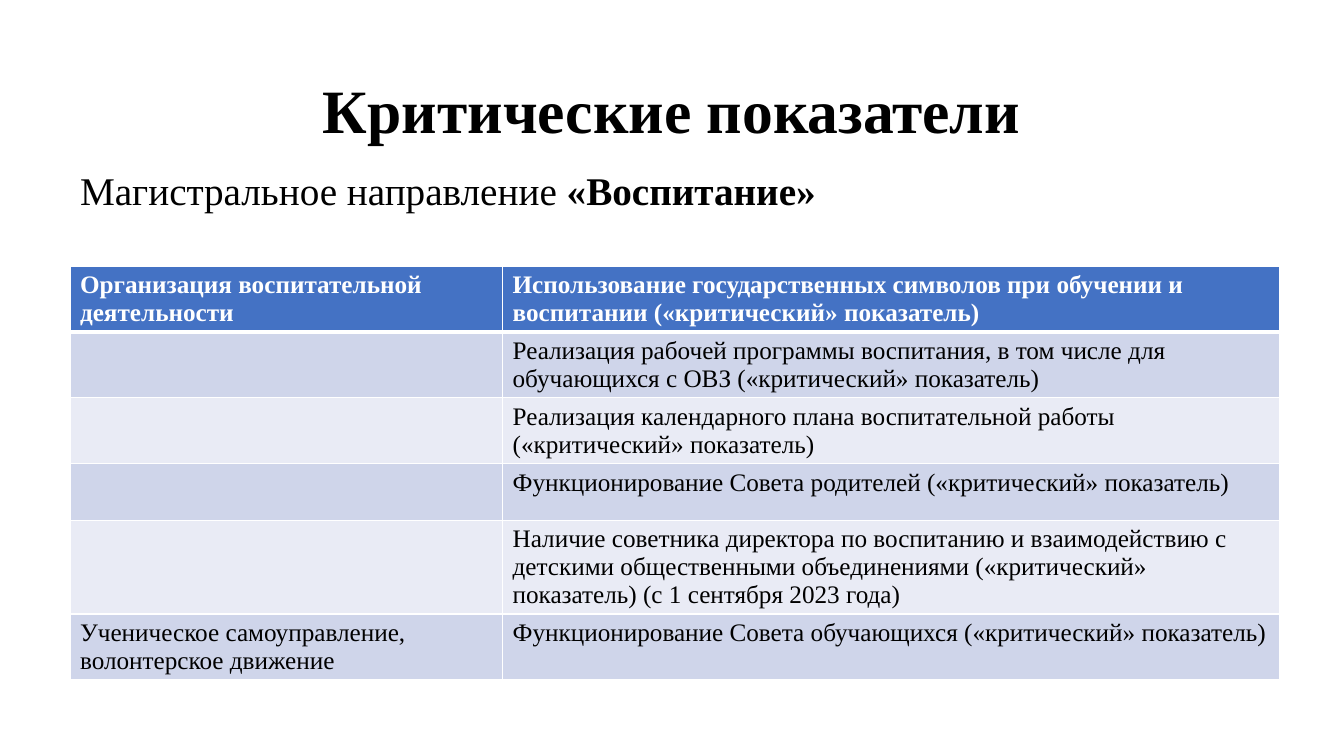
from lxml.etree import SubElement
from pptx import Presentation
from pptx.dml.color import RGBColor
from pptx.enum.text import MSO_ANCHOR, MSO_AUTO_SIZE, PP_ALIGN
from pptx.oxml.ns import qn
from pptx.util import Pt

BLACK = RGBColor(0x00, 0x00, 0x00)
WHITE = RGBColor(0xFF, 0xFF, 0xFF)
HEADER_BLUE = RGBColor(0x44, 0x72, 0xC4)
BAND_DARK = RGBColor(0xCF, 0xD5, 0xEA)
BAND_LIGHT = RGBColor(0xE9, 0xEB, 0xF5)
FONT = "Times New Roman"

COLUMN_WIDTHS = (309, 555)
ROW_HEIGHT = 40.32
INDICATORS = [
    ("Организация воспитательной деятельности",
     "Использование государственных символов при обучении и воспитании («критический» показатель)"),
    ("", "Реализация рабочей программы воспитания, в том числе для обучающихся с ОВЗ («критический» показатель)"),
    ("", "Реализация календарного плана воспитательной работы («критический» показатель)"),
    ("", "Функционирование Совета родителей («критический» показатель)"),
    ("", "Наличие советника директора по воспитанию и взаимодействию с детскими общественными "
         "объединениями («критический» показатель) (с 1 сентября 2023 года)"),
    ("Ученическое самоуправление, волонтерское движение",
     "Функционирование Совета обучающихся («критический» показатель)"),
]


def add_text(p, text, size=18, bold=False, color=BLACK):
    r = p.add_run()
    r.text = text
    r.font.name = FONT
    r.font.size = Pt(size)
    r.font.bold = bold
    r.font.color.rgb = color


def place(sp, left, top, width, height):
    sp.left, sp.top, sp.width, sp.height = Pt(left), Pt(top), Pt(width), Pt(height)
    sp.text_frame.word_wrap = True
    sp.text_frame.auto_size = MSO_AUTO_SIZE.NONE


def add_title(sp, left, top, width, height):
    place(sp, left, top, width, height)
    sp.text_frame.vertical_anchor = MSO_ANCHOR.MIDDLE
    p = sp.text_frame.paragraphs[0]
    p.alignment = PP_ALIGN.CENTER
    p.line_spacing = 0.9
    add_text(p, "Критические показатели", size=44, bold=True)


def add_direction(sp, left, top, width, height):
    place(sp, left, top, width, height)
    p = sp.text_frame.paragraphs[0]
    p.line_spacing = 0.9
    p.space_before = Pt(10)
    # No bullet, no hanging indent
    pPr = p._p.get_or_add_pPr()
    pPr.set("marL", "0")
    pPr.set("indent", "0")
    SubElement(pPr, qn("a:buNone"))
    add_text(p, "Магистральное направление ", size=28)
    add_text(p, "«Воспитание»", size=28, bold=True)


def set_borders(cell, **widths):
    tcPr = cell._tc.get_or_add_tcPr()
    for i, (side, width) in enumerate(widths.items()):
        ln = tcPr.makeelement(qn(f"a:ln{side}"), {"w": str(Pt(width))})
        fill = SubElement(ln, qn("a:solidFill"))
        SubElement(fill, qn("a:srgbClr"), val=str(WHITE))
        tcPr.insert(i, ln)


def add_indicators(slide, left, top):
    height = ROW_HEIGHT * len(INDICATORS)
    table = slide.shapes.add_table(len(INDICATORS), len(COLUMN_WIDTHS), Pt(left), Pt(top),
                                   Pt(sum(COLUMN_WIDTHS)), Pt(height)).table
    for column, width in zip(table.columns, COLUMN_WIDTHS):
        column.width = Pt(width)
    for i, texts in enumerate(INDICATORS):
        header = i == 0
        table.rows[i].height = Pt(ROW_HEIGHT)
        for j, text in enumerate(texts):
            cell = table.cell(i, j)
            cell.fill.solid()
            cell.fill.fore_color.rgb = HEADER_BLUE if header else BAND_DARK if i % 2 else BAND_LIGHT
            set_borders(cell, L=1, R=1, T=3 if i == 1 else 1, B=3 if header else 1)
            if text:
                add_text(cell.text_frame.paragraphs[0], text, bold=header,
                         color=WHITE if header else BLACK)


def main():
    prs = Presentation()
    prs.slide_width, prs.slide_height = Pt(960), Pt(540)
    slide = prs.slides.add_slide(prs.slide_layouts[1])
    # Heading
    add_title(slide.shapes.title, 66, 28.75, 828, 104.4)
    # Direction line
    add_direction(slide.placeholders[1], 50, 119, 864, 384.5)
    # Table of indicators
    add_indicators(slide, 50, 190)
    prs.save("out.pptx")


if __name__ == "__main__":
    main()
